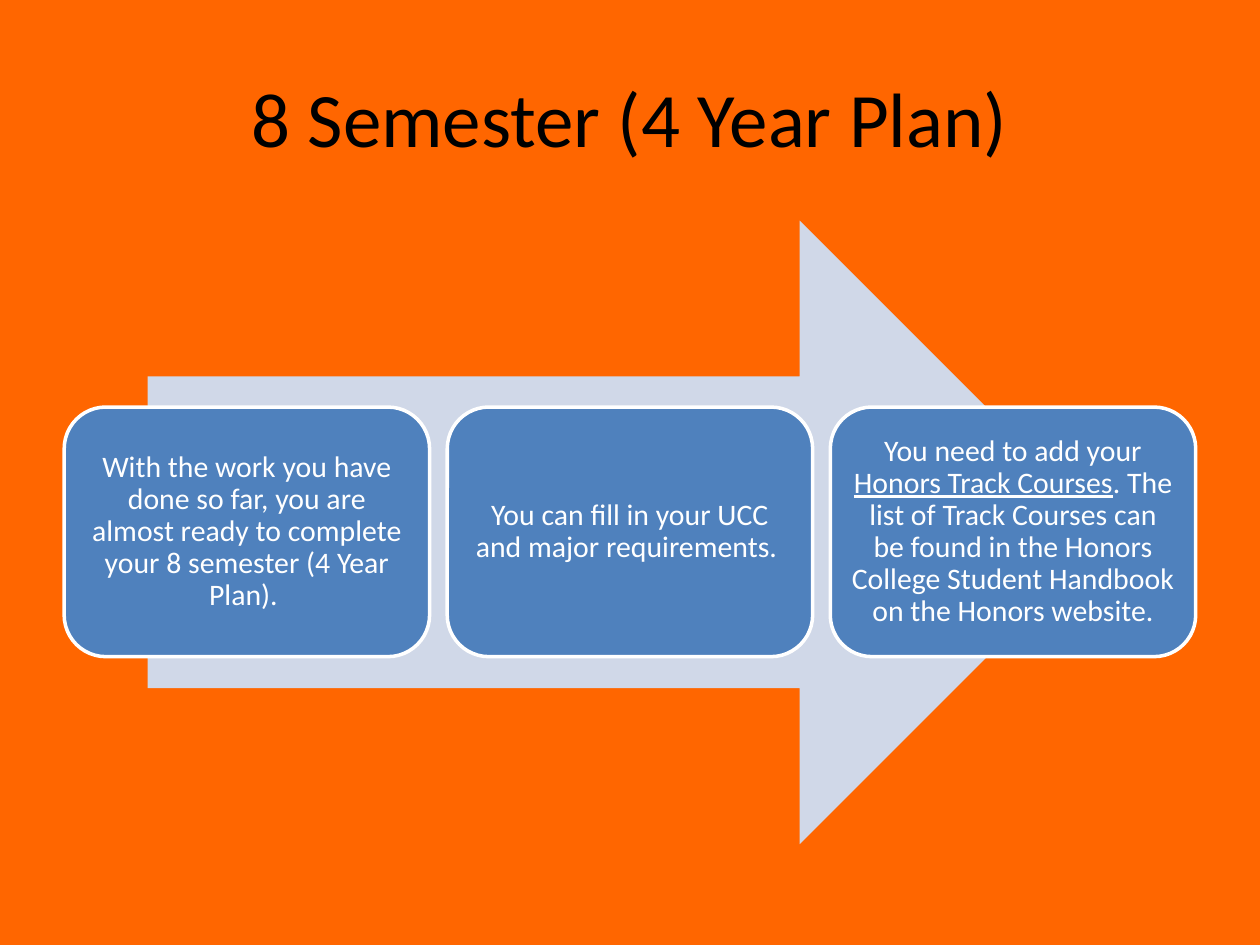
"""Build the 8 semester plan slide: a title and three steps on a wide arrow."""
from pptx import Presentation
from pptx.dml.color import RGBColor
from pptx.enum import shapes, text
from pptx.util import Pt

COLOURS = {
    "background": "FF6600",
    "title": "000000",
    "arrow": "D0D8E8",
    "step": "4F81BD",
    "light": "FFFFFF",
}
FONT = "Calibri"
STEP_LEFT, STEP_TOP, STEP_WIDTH, STEP_HEIGHT = 36.7, 232.6, 208.8, 142.6
STEP_PITCH = 218.9
STEPS = [
    [("With the work you have done so far, you are almost ready to complete "
      "your 8 semester (4 Year Plan). ", False)],
    [("You can fill in your UCC and major requirements. ", False)],
    [("You need to add your ", False),
     ("Honors Track Courses", True),
     (". The list of Track Courses can be found in the Honors College "
      "Student Handbook on the Honors website.", False)],
]


def colour(name):
    return RGBColor.from_string(COLOURS[name])


def paint(fill, name):
    fill.solid()
    fill.fore_color.rgb = colour(name)


def place(box, left, top, width, height):
    box.left, box.top = Pt(left), Pt(top)
    box.width, box.height = Pt(width), Pt(height)


def add_span(para, words, size, name, underline=False):
    span = para.add_run()
    span.text = words
    span.font.name = FONT
    span.font.size = Pt(size)
    span.font.color.rgb = colour(name)
    if underline:
        span.font.underline = True


def add_title(page, words):
    box = page.shapes.title
    place(box, 36, 21.6, 648, 90)
    box.text_frame.vertical_anchor = text.MSO_ANCHOR.MIDDLE
    para = box.text_frame.paragraphs[0]
    para.alignment = text.PP_ALIGN.CENTER
    add_span(para, words, 44, "title")


def add_shape(page, kind, left, top, width, height, fill):
    box = page.shapes.add_shape(kind, Pt(left), Pt(top), Pt(width), Pt(height))
    box.shadow.inherit = False
    paint(box.fill, fill)
    return box


def add_arrow(page):
    arrow = add_shape(page, shapes.MSO_SHAPE.RIGHT_ARROW,
                      84.4, 126, 550.8, 356.4, "arrow")
    arrow.line.fill.background()


def add_step(page, index, spans):
    box = add_shape(page, shapes.MSO_SHAPE.ROUNDED_RECTANGLE,
                    STEP_LEFT + index * STEP_PITCH, STEP_TOP,
                    STEP_WIDTH, STEP_HEIGHT, "step")
    box.line.color.rgb = colour("light")
    box.line.width = Pt(2)
    frame = box.text_frame
    frame.word_wrap = True
    frame.vertical_anchor = text.MSO_ANCHOR.MIDDLE
    frame.margin_left = frame.margin_right = Pt(5)
    frame.margin_top = frame.margin_bottom = Pt(5)
    para = frame.paragraphs[0]
    para.alignment = text.PP_ALIGN.CENTER
    para.line_spacing = 0.9
    for words, underline in spans:
        add_span(para, words, 17, "light", underline)


def main():
    deck = Presentation()
    deck.slide_width, deck.slide_height = Pt(720), Pt(540)
    page = deck.slides.add_slide(deck.slide_layouts[5])
    paint(page.background.fill, "background")
    add_title(page, "8 Semester (4 Year Plan)")
    add_arrow(page)
    for index, spans in enumerate(STEPS):
        add_step(page, index, spans)
    deck.save("out.pptx")


if __name__ == "__main__":
    main()
